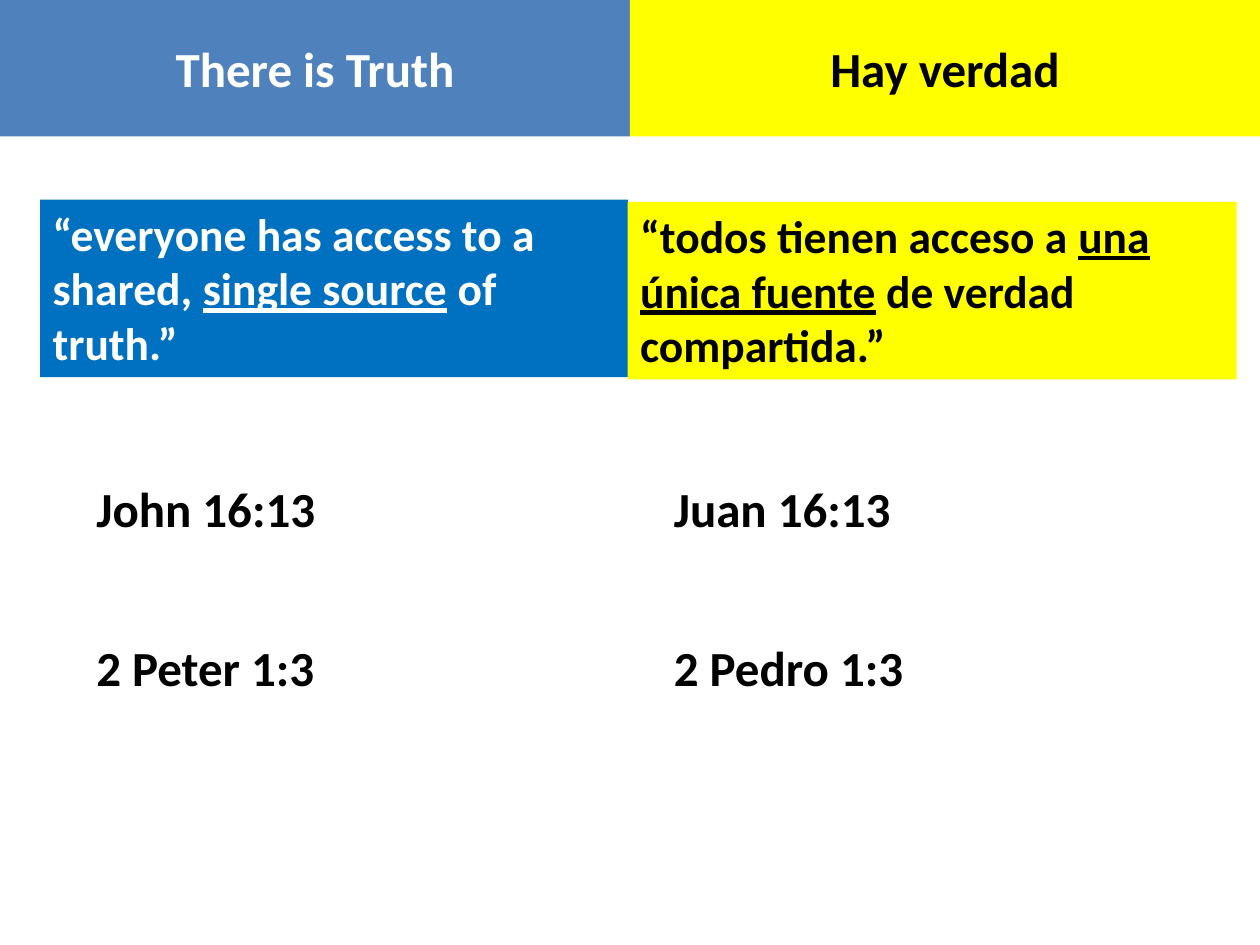
from pptx import Presentation
from pptx.dml.color import RGBColor as Rgb
from pptx.enum.shapes import MSO_SHAPE as Form
from pptx.enum.text import MSO_ANCHOR as Anchor, MSO_AUTO_SIZE as Fit, PP_ALIGN as Align
from pptx.util import Pt

INK = {"blue": "4F81BD", "deep": "0070C0", "yellow": "FFFF00",
       "white": "FFFFFF", "black": "000000"}


def place(shape, box):
    shape.left, shape.top, shape.width, shape.height = [Pt(n) for n in box]


def paint(shape, fill):
    shape.fill.solid()
    shape.fill.fore_color.rgb = Rgb.from_string(INK[fill])
    shape.line.fill.background()


def block(slide, box, fill):
    shape = slide.shapes.add_shape(Form.RECTANGLE, *[Pt(n) for n in box])
    shape.shadow.inherit = False
    paint(shape, fill)
    return shape


def write(shape, runs, size, ink, align=Align.LEFT, anchor=Anchor.TOP):
    frame = shape.text_frame
    frame.word_wrap = True
    frame.auto_size = Fit.NONE
    frame.vertical_anchor = anchor
    line = frame.paragraphs[0]
    line.alignment = align
    for text, under in runs:
        run = line.add_run()
        run.text = text
        font = run.font
        font.name, font.size, font.bold = "Calibri", Pt(size), True
        font.color.rgb = Rgb.from_string(INK[ink])
        if under:
            font.underline = True


def header(slide, box, left, right):
    x, y, wide, high = box
    half = wide / 2
    title = slide.shapes.title
    place(title, (x, y, half, high))
    paint(title, "blue")
    other = block(slide, (x + half, y, half, high), "yellow")
    for shape, text, ink in ((title, left, "white"), (other, right, "black")):
        write(shape, [(text, False)], 28, ink, Align.CENTER, Anchor.MIDDLE)


def quote(slide, box, runs, fill, ink):
    write(block(slide, box, fill), runs, 26, ink)


def verses(slide, box, rows):
    x, y, wide, high = box
    step = high / len(rows)
    for i, text in enumerate(rows):
        note = slide.shapes.add_textbox(Pt(x), Pt(y + i * step), Pt(wide), Pt(41))
        write(note, [(text, False)], 28, "black")


def main():
    deck = Presentation()
    deck.slide_width, deck.slide_height = Pt(720), Pt(540)
    slide = deck.slides.add_slide(deck.slide_layouts[5])

    header(slide, (0, 0, 720, 78), "There is Truth", "Hay verdad")
    quote(slide, (23, 114, 336, 101.5),
          [("“everyone has access to a shared, ", False),
           ("single source", True), (" of truth.”", False)], "deep", "white")
    quote(slide, (358.7, 115.3, 348, 101.5),
          [("“todos tienen acceso a ", False),
           ("una única fuente", True), (" de verdad compartida.”", False)],
          "yellow", "black")
    verses(slide, (48, 270, 282, 181.5), ["John 16:13", "2 Peter 1:3"])
    verses(slide, (378, 270, 282, 181.5), ["Juan 16:13", "2 Pedro 1:3"])
    deck.save("out.pptx")


if __name__ == "__main__":
    main()
